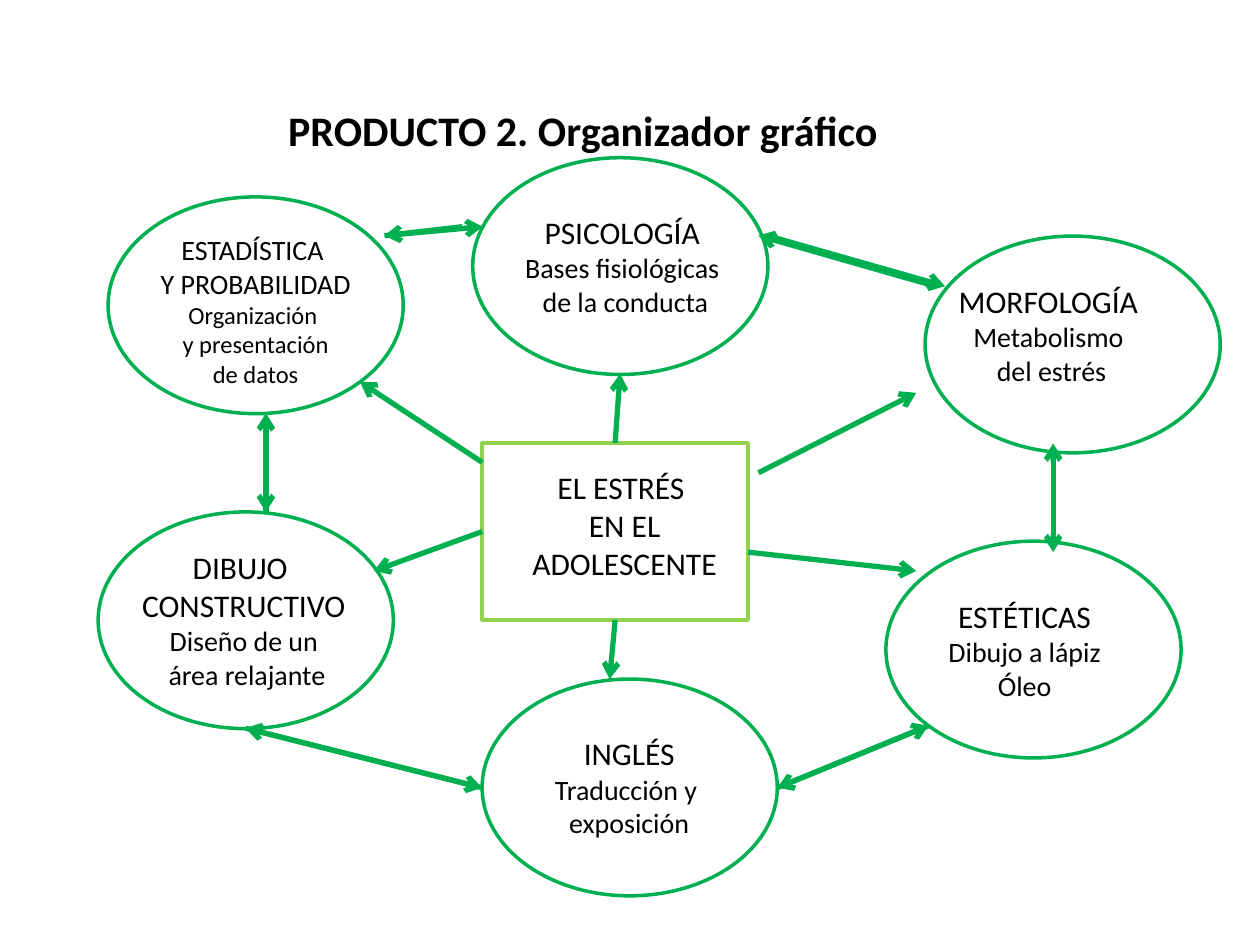
from lxml import etree
from pptx import Presentation
from pptx.dml.color import RGBColor
from pptx.enum import shapes, text
from pptx.oxml import ns
from pptx.util import Cm, Pt

COLORS = {"ink": "000000", "green": "00B050", "lime": "92D050"}
TOP, LEFT, BOTTOM = 0, 1, 2
OVAL_SIZE = (5.95, 4.37)


class Organizer:
    font = {"name": "Calibri", "bold": False}
    outline_width = 2
    arrow_width = 3

    def __init__(self, slide):
        self.slide = slide

    def color(self, name):
        return RGBColor.from_string(COLORS[name])

    def label(self, box, lines, align=text.PP_ALIGN.CENTER, wrap=False, **style):
        frame = self.slide.shapes.add_textbox(*map(Cm, box)).text_frame
        frame.word_wrap = wrap
        frame.auto_size = text.MSO_AUTO_SIZE.SHAPE_TO_FIT_TEXT
        for index, (words, size) in enumerate(lines):
            paragraph = frame.paragraphs[0] if index == 0 else frame.add_paragraph()
            paragraph.alignment = align
            run = paragraph.add_run()
            run.text = words
            for key, value in {**self.font, "size": Pt(size), **style}.items():
                setattr(run.font, key, value)
            run.font.color.rgb = self.color("ink")

    def outline(self, kind, box, color):
        shape = self.slide.shapes.add_shape(kind, *map(Cm, box))
        shape.shadow.inherit = False
        shape.fill.background()
        shape.line.color.rgb = self.color(color)
        shape.line.width = Pt(self.outline_width)
        return shape

    def arrow(self, start, end, source=None, side=None):
        line = self.slide.shapes.add_connector(
            shapes.MSO_CONNECTOR.STRAIGHT, *map(Cm, start + end))
        if source is not None:
            line.begin_connect(source, side)
        line.line.color.rgb = self.color("green")
        line.line.width = Pt(self.arrow_width)
        etree.SubElement(line.line._get_or_add_ln(), ns.qn("a:tailEnd"), type="arrow")
        etree.SubElement(line._element.spPr, ns.qn("a:effectLst"))


def main():
    deck = Presentation()
    deck.slide_width, deck.slide_height = Cm(25.4), Cm(19.05)
    organizer = Organizer(deck.slides.add_slide(deck.slide_layouts[6]))

    organizer.label((5.56, 1.98, 12.5, 1.27), [("PRODUCTO 2. Organizador gráfico", 24)],
                    align=text.PP_ALIGN.LEFT, bold=True)

    stress = organizer.outline(shapes.MSO_SHAPE.RECTANGLE, (9.72, 8.93, 5.36, 3.57), "lime")
    organizer.label((10.31, 9.32, 4.42, 2.57),
                    [("EL ESTRÉS", 18), (" EN EL", 18), (" ADOLESCENTE", 18)])

    subjects = [
        ((9.53, 3.18), (10.31, 4.17, 4.47, 2.39), False,
         [("PSICOLOGÍA", 18), ("Bases fisiológicas", 16), (" de la conducta", 16)]),
        ((18.65, 4.76), (19.05, 5.56, 4.17, 2.39), False,
         [("MORFOLOGÍA", 18), ("Metabolismo", 16), (" del estrés", 16)]),
        ((17.86, 10.91), (18.85, 11.91, 3.61, 2.39), False,
         [("ESTÉTICAS", 18), ("Dibujo a lápiz", 16), ("Óleo", 16)]),
        ((9.72, 13.69), (10.92, 14.68, 3.53, 2.39), False,
         [("INGLÉS", 18), ("Traducción y ", 16), ("exposición", 16)]),
        ((1.98, 10.32), (2.59, 10.92, 4.65, 3.18), False,
         [("DIBUJO ", 18), ("CONSTRUCTIVO", 18), ("Diseño de un", 16),
          (" área relajante", 16)]),
        ((2.18, 3.97), (2.97, 4.57, 4.37, 3.43), True,
         [("ESTADÍSTICA ", 16), ("Y PROBABILIDAD", 16), ("Organización ", 14),
          ("y presentación", 14), ("de datos", 14)]),
    ]
    for corner, label_box, wrap, lines in subjects:
        organizer.outline(shapes.MSO_SHAPE.OVAL, corner + OVAL_SIZE, "green")
        organizer.label(label_box, lines, wrap=wrap)

    spokes = [
        ((12.4, 8.93), (12.5, 7.54), stress, TOP),
        ((9.72, 10.72), (7.54, 11.51), stress, LEFT),
        ((12.4, 12.5), (12.29, 13.69), stress, BOTTOM),
        ((9.72, 9.32), (7.26, 7.7)),
        ((15.29, 9.53), (18.47, 7.92)),
        ((15.08, 11.13), (18.47, 11.51)),
    ]
    ring = [
        ((7.75, 4.75), (9.73, 4.57)),
        ((9.32, 4.57), (7.75, 4.75)),
        ((18.85, 5.77), (15.29, 4.75)),
        ((15.47, 4.75), (19.05, 5.77)),
        ((21.23, 9.32), (21.23, 11.13)),
        ((21.23, 10.92), (21.23, 8.94)),
        ((15.67, 15.88), (18.72, 14.63)),
        ((18.72, 14.63), (15.67, 15.88)),
        ((9.72, 15.88), (4.95, 14.68)),
        ((4.95, 14.68), (9.72, 15.88)),
        ((5.36, 10.32), (5.36, 8.33)),
        ((5.36, 8.53), (5.36, 10.32)),
    ]
    for link in spokes + ring:
        organizer.arrow(*link)

    deck.save("out.pptx")


if __name__ == "__main__":
    main()
